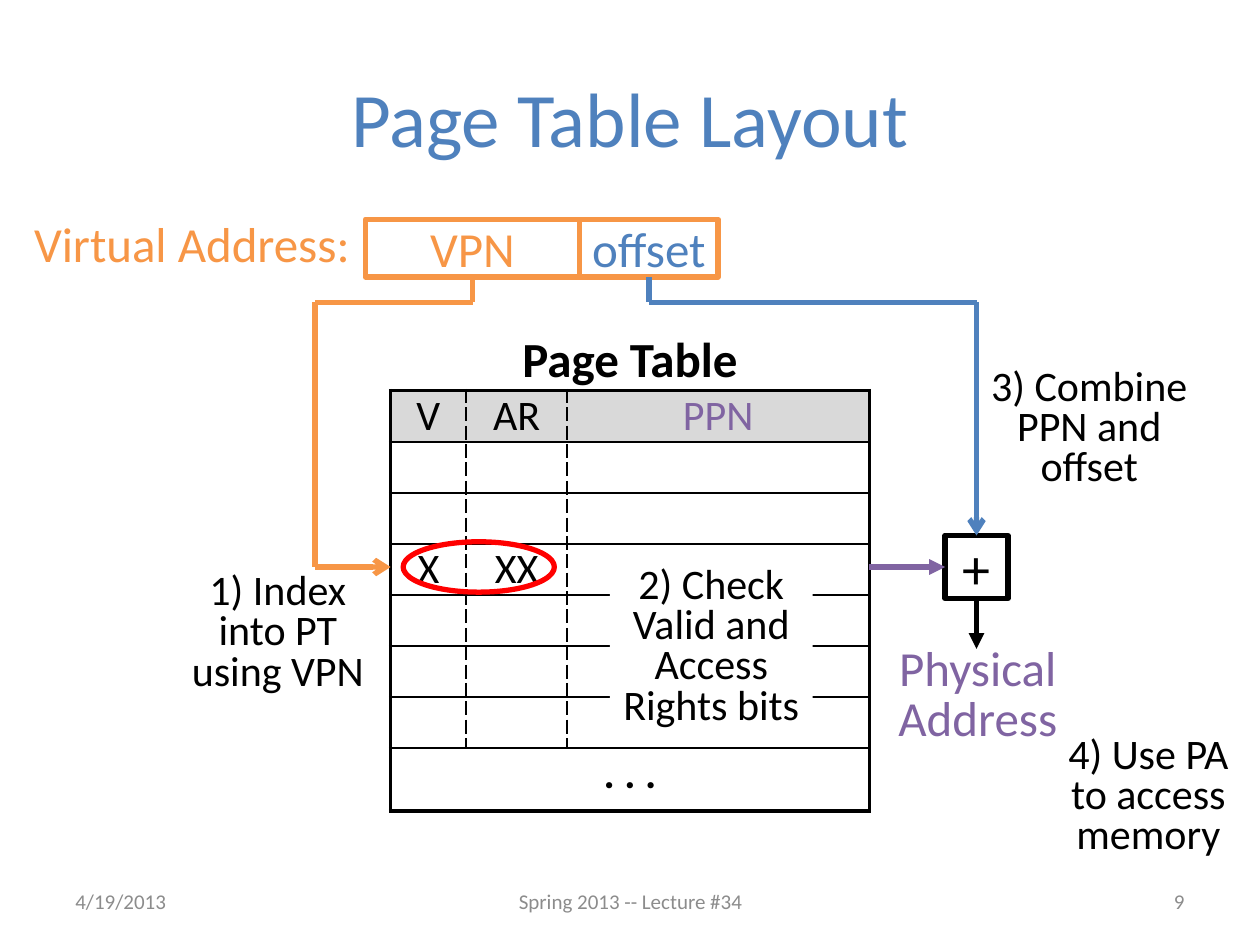
"""Build the Page Table Layout slide."""
from dataclasses import dataclass
from itertools import pairwise

from lxml import etree
from pptx import Presentation
from pptx import util as u
from pptx.dml.color import RGBColor
from pptx.enum import shapes, text
from pptx.oxml.ns import qn


@dataclass(frozen=True)
class Theme:
    font: str = "Calibri"
    black: str = "000000"
    white: str = "FFFFFF"
    grey: str = "8C8C8C"
    header: str = "D9D9D9"
    blue: str = "4F81BD"
    orange: str = "F79646"
    purple: str = "8064A2"
    red: str = "FF0000"
    title: int = 44
    operator: int = 32
    label: int = 28
    body: int = 24
    footer: int = 12
    stroke: int = 3


THEME = Theme()
ALIGN = {"l": text.PP_ALIGN.LEFT, "c": text.PP_ALIGN.CENTER, "r": text.PP_ALIGN.RIGHT}
ANCHOR = {"top": text.MSO_ANCHOR.TOP, "middle": text.MSO_ANCHOR.MIDDLE}
RECT, OVAL = shapes.MSO_SHAPE.RECTANGLE, shapes.MSO_SHAPE.OVAL
STANDARD, TIGHT, FIELD, NONE = (0.1, 0.05, 0.1, 0.05), (0.07, 0.03, 0.07, 0.03), (0.07, 0.1, 0.07, 0), (0,) * 4

TITLE = "Page Table Layout"
FOOTERS = [
    ("4/19/2013", (0.5, 6.95, 2.33, 0.4), "l"),
    ("Spring 2013 -- Lecture #34", (3.42, 6.95, 3.17, 0.4), "c"),
    ("9", (7.17, 6.95, 2.33, 0.4), "r"),
]
LABELS = [
    ("Virtual Address:", (0.2, 1.74, 2.68, 0.46), dict(color=THEME.orange, align="l", grow=True)),
    ("Page Table", (3.1, 2.65, 3.8, 0.46), dict(bold=True)),
    ("Physical\nAddress", (7.05, 5.1, 1.42, 0.86), dict(color=THEME.purple, grow=True)),
]
FIELDS = [
    ("VPN", (2.9, 1.74, 1.7, 0.46), THEME.orange),
    ("offset", (4.6, 1.74, 1.1, 0.46), THEME.blue),
]
STEPS = [
    ("1) Index into PT using VPN", (1.4, 4.5, 1.61, 1.08)),
    ("3) Combine PPN and offset", (7.76, 2.88, 1.77, 1.08)),
    ("4) Use PA to access memory", (8.23, 5.8, 1.77, 1.07)),
]
CHECK = ("2) Check Valid and Access Rights bits", (4.84, 4.5, 1.61, 1.3))
CHECK_RING = (3.2, 4.3, 1.2, 0.4)
ADDER = ("+", (7.5, 4.25, 0.5, 0.5))
ROUTES = [
    ([(3.75, 2.2), (3.75, 2.4), (2.5, 2.4), (2.5, 4.5), (3.1, 4.5)], THEME.orange, "arrow"),
    ([(5.15, 2.2), (5.15, 2.4), (7.75, 2.4), (7.75, 4.25)], THEME.blue, "arrow"),
    ([(6.9, 4.5), (7.5, 4.5)], THEME.purple, "triangle"),
    ([(7.75, 4.75), (7.75, 5.15)], THEME.black, "triangle"),
]
TABLE_AT = (3.1, 3.1)
COLUMNS = [0.6, 0.8, 2.4]
ROW_HEIGHT, LAST_HEIGHT = 0.405, 0.5
EMPTY = ["", "", ""]
ROWS = [["V", "AR", "PPN"], EMPTY, EMPTY, ["X", "XX", ""], EMPTY, EMPTY, EMPTY, [". . .", "", ""]]


def length(inches):
    return u.Cm(inches * 2.54)


def place(at):
    return [length(value) for value in at]


def rgb(value):
    return RGBColor.from_string(value)


def write(frame, words, size=THEME.body, color=THEME.black, align="c", bold=False,
          anchor="top", spacing=None, insets=STANDARD, wrap=True, grow=False):
    frame.word_wrap = wrap
    frame.auto_size = text.MSO_AUTO_SIZE.SHAPE_TO_FIT_TEXT if grow else text.MSO_AUTO_SIZE.NONE
    frame.vertical_anchor = ANCHOR[anchor]
    frame.margin_left, frame.margin_top, frame.margin_right, frame.margin_bottom = place(insets)
    for index, line in enumerate(words.split("\n")):
        para = frame.add_paragraph() if index else frame.paragraphs[0]
        style_line(para, line, size, color, align, bold, spacing)


def style_line(para, line, size, color, align="c", bold=False, spacing=None):
    para.alignment = ALIGN[align]
    para.line_spacing = spacing
    span = para.add_run()
    span.text = line
    span.font.name, span.font.size, span.font.bold = THEME.font, u.Pt(size), bold
    span.font.color.rgb = rgb(color)


def add_text(slide, words, at, **style):
    write(slide.shapes.add_textbox(*place(at)).text_frame, words, **style)


def add_box(slide, kind, at, line=None, fill=None):
    box = slide.shapes.add_shape(kind, *place(at))
    box.shadow.inherit = False
    if fill:
        box.fill.solid()
        box.fill.fore_color.rgb = rgb(fill)
    else:
        box.fill.background()
    if line:
        box.line.color.rgb = rgb(line)
        box.line.width = u.Pt(THEME.stroke)
    else:
        box.line.fill.background()
    return box


def add_route(slide, points, color, arrow):
    for start, end in pairwise(points):
        line = slide.shapes.add_connector(shapes.MSO_CONNECTOR.STRAIGHT, *place(start + end))
        line.line.color.rgb = rgb(color)
        line.line.width = u.Pt(THEME.stroke)
        if end == points[-1]:
            etree.SubElement(line.line._get_or_add_ln(), qn("a:tailEnd"), type=arrow)
        etree.SubElement(line._element.spPr, qn("a:effectLst"))


def add_border(cell, side, width, dash="solid"):
    line = etree.SubElement(cell._tc.get_or_add_tcPr(), qn(f"a:ln{side}"), w=str(u.Pt(width)))
    fill = etree.SubElement(line, qn("a:solidFill"))
    etree.SubElement(fill, qn("a:srgbClr"), val=THEME.black)
    etree.SubElement(line, qn("a:prstDash"), val=dash)


def add_page_table(slide):
    last_row, last_column = len(ROWS) - 1, len(COLUMNS) - 1
    heights = [ROW_HEIGHT] * last_row + [LAST_HEIGHT]
    frame = slide.shapes.add_table(len(ROWS), len(COLUMNS), *place(TABLE_AT + (sum(COLUMNS), sum(heights))))
    table = frame.table
    table.first_row = table.horz_banding = False
    for column, width in zip(table.columns, COLUMNS):
        column.width = length(width)
    for row, height in zip(table.rows, heights):
        row.height = length(height)
    table.cell(last_row, 0).merge(table.cell(last_row, last_column))
    outer, inner, divider = (2.25,), (1,), (1.5, "lgDash")
    for r, row in enumerate(ROWS):
        for c, words in enumerate(row):
            cell = table.cell(r, c)
            cell.margin_left = cell.margin_right = cell.margin_top = cell.margin_bottom = 0
            merged = r == last_row
            add_border(cell, "L", *(outer if c == 0 else divider))
            add_border(cell, "R", *(outer if merged or c == last_column else divider))
            add_border(cell, "T", *(outer if r == 0 else inner))
            add_border(cell, "B", *(outer if merged else inner))
            if r == 0:
                cell.fill.solid()
                cell.fill.fore_color.rgb = rgb(THEME.header)
            else:
                cell.fill.background()
            if words:
                color = THEME.purple if words == "PPN" else THEME.black
                style_line(cell.text_frame.paragraphs[0], words, THEME.body, color, bold=merged)
    table.cell(last_row, 0).text_frame.paragraphs[0].space_after = u.Pt(6)


def main():
    deck = Presentation()
    deck.slide_width, deck.slide_height = length(10), length(7.5)
    slide = deck.slides.add_slide(deck.slide_layouts[5])
    title = slide.shapes.title
    title.left, title.top, title.width, title.height = place((0.5, 0.3, 9, 1.25))
    write(title.text_frame, TITLE, size=THEME.title, color=THEME.blue, anchor="middle")
    for words, at, align in FOOTERS:
        add_text(slide, words, at, size=THEME.footer, color=THEME.grey, align=align, anchor="middle")
    add_page_table(slide)
    for words, at, style in LABELS:
        add_text(slide, words, at, size=THEME.label, spacing=0.85, insets=TIGHT, wrap=False, **style)
    for words, at, color in FIELDS:
        box = add_box(slide, RECT, at, line=THEME.orange)
        write(box.text_frame, words, size=THEME.label, color=color, spacing=0.75, insets=FIELD, wrap=False)
    for words, at in STEPS:
        add_text(slide, words, at, spacing=0.8, grow=True)
    words, at = CHECK
    write(add_box(slide, RECT, at, fill=THEME.white).text_frame, words, spacing=0.8, insets=NONE, grow=True)
    add_box(slide, OVAL, CHECK_RING, line=THEME.red)
    words, at = ADDER
    adder = add_box(slide, RECT, at, line=THEME.black)
    write(adder.text_frame, words, size=THEME.operator, anchor="middle", insets=NONE, wrap=False)
    for points, color, arrow in ROUTES:
        add_route(slide, points, color, arrow)
    deck.save("out.pptx")


if __name__ == "__main__":
    main()
